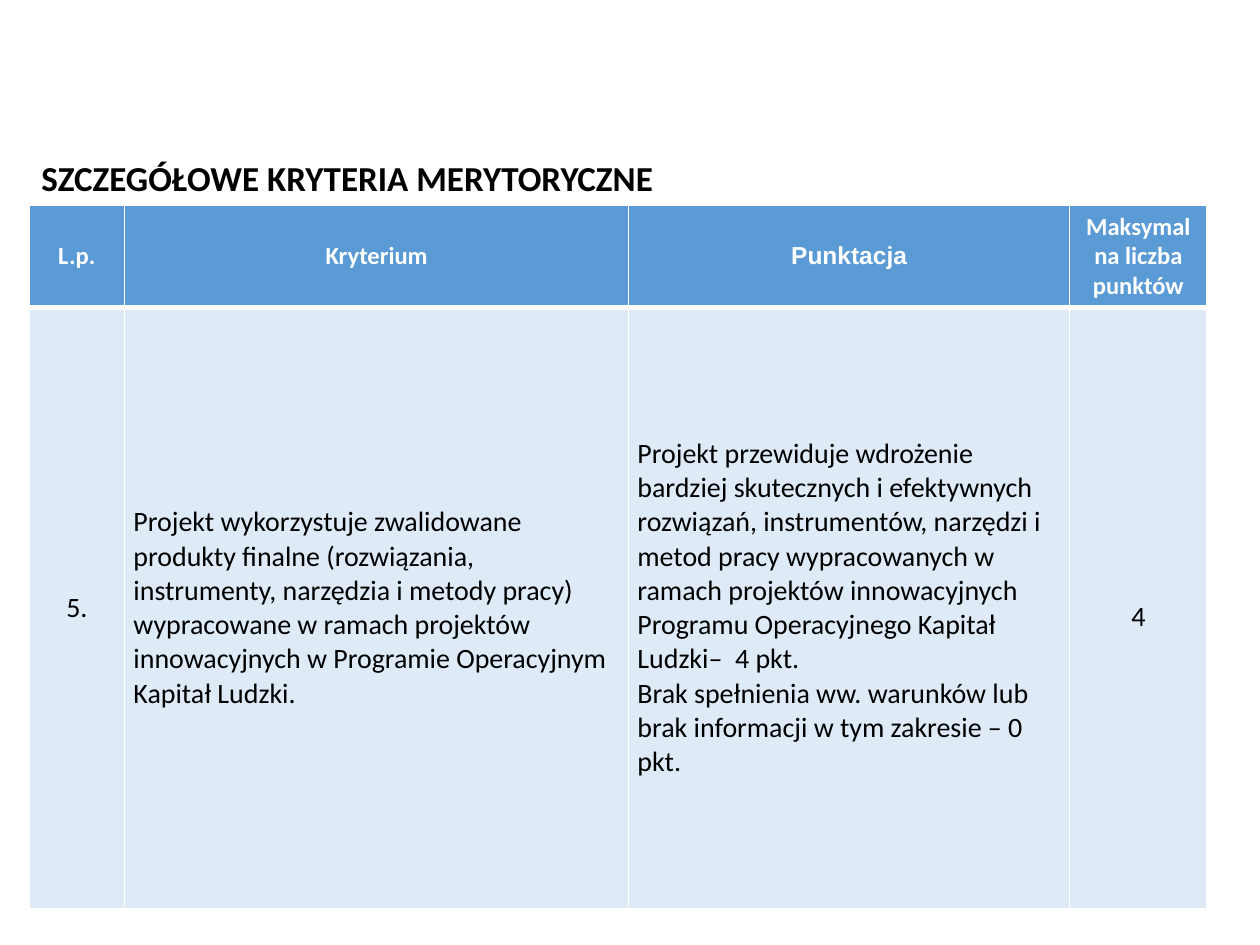
import pptx
import pptx.dml.color
import pptx.enum.text
import pptx.oxml
import pptx.oxml.ns
import pptx.util

WIDTH, HEIGHT = 10, 7.5
LEFT, CONTENT_WIDTH = 0.23, 9.35
COLUMN_WIDTHS = (0.76, 4, 3.5, 1.09)
ROW_HEIGHTS = (0.79, 4.77)
HEADER_FILL, BODY_FILL = "5B9BD5", "DEEBF7"
WHITE, BLACK = "FFFFFF", "000000"
CENTER = pptx.enum.text.PP_ALIGN.CENTER
LEFT_ALIGN = pptx.enum.text.PP_ALIGN.LEFT
MIDDLE = pptx.enum.text.MSO_ANCHOR.MIDDLE

HEADERS = (("L.p.", "Calibri"), ("Kryterium", "Calibri"),
           ("Punktacja", "Arial"), ("Maksymalna liczba punktów", "Calibri"))
CRITERION = (
    "Projekt wykorzystuje zwalidowane produkty finalne (rozwiązania, instrumenty, "
    "narzędzia i metody pracy) wypracowane w ramach projektów innowacyjnych w "
    "Programie Operacyjnym Kapitał Ludzki.")
SCORING = (
    "Projekt przewiduje wdrożenie bardziej skutecznych i efektywnych rozwiązań, "
    "instrumentów, narzędzi i metod pracy wypracowanych w ramach projektów "
    "innowacyjnych Programu Operacyjnego Kapitał Ludzki–  4 pkt.",
    "Brak spełnienia ww. warunków lub brak informacji w tym zakresie – 0 pkt.")


def color(value):
    return pptx.dml.color.RGBColor.from_string(value)


def inches(value):
    return pptx.util.Inches(value)


def write(frame, lines, size, text_color, bold=False, font="Calibri", align=LEFT_ALIGN):
    for index, line in enumerate(lines):
        paragraph = frame.paragraphs[0] if index == 0 else frame.add_paragraph()
        paragraph.alignment = align
        run = paragraph.add_run()
        run.text = line
        run.font.name = font
        run.font.size = pptx.util.Pt(size)
        run.font.bold = bold
        run.font.color.rgb = color(text_color)


def style_cell(cell, fill, top, bottom):
    """Add white borders, with top and bottom widths in points, then the fill."""
    properties = cell._tc.get_or_add_tcPr()
    for side, width in (("L", 1), ("R", 1), ("T", top), ("B", bottom)):
        properties.append(pptx.oxml.parse_xml(
            f'<a:ln{side} {pptx.oxml.ns.nsdecls("a")} w="{pptx.util.Pt(width)}">'
            f'<a:solidFill><a:srgbClr val="{WHITE}"/></a:solidFill></a:ln{side}>'))
    cell.fill.solid()
    cell.fill.fore_color.rgb = color(fill)
    cell.vertical_anchor = MIDDLE


def add_heading(slide, left, top, width, height):
    box = slide.shapes.add_textbox(*map(inches, (left, top, width, height)))
    frame = box.text_frame
    frame.word_wrap = True
    frame.vertical_anchor = MIDDLE
    write(frame, ["SZCZEGÓŁOWE KRYTERIA MERYTORYCZNE"], 20, BLACK, bold=True)


def add_criteria_table(slide, left, top, width, height):
    shape = slide.shapes.add_table(2, 4, *map(inches, (left, top, width, height)))
    table = shape.table
    for column, share in zip(table.columns, COLUMN_WIDTHS):
        column.width = inches(width * share / sum(COLUMN_WIDTHS))
    for row, share in zip(table.rows, ROW_HEIGHTS):
        row.height = inches(height * share / sum(ROW_HEIGHTS))

    # Header row
    for index, (label, font) in enumerate(HEADERS):
        cell = table.cell(0, index)
        style_cell(cell, HEADER_FILL, 1, 3)
        write(cell.text_frame, [label], 14, WHITE, True, font, CENTER)

    # Criterion row: number and points centred, descriptions left-aligned
    for index, lines in enumerate((["5."], [CRITERION], SCORING, ["4"])):
        cell = table.cell(1, index)
        style_cell(cell, BODY_FILL, 3, 1)
        is_description = index in (1, 2)
        if is_description:
            cell.margin_left = cell.margin_right = inches(0.07)
            cell.margin_top = cell.margin_bottom = 0
        write(cell.text_frame, lines, 16, BLACK,
              align=LEFT_ALIGN if is_description else CENTER)
    criterion = table.cell(1, 1).text_frame.paragraphs[0]
    criterion.space_after = pptx.util.Pt(4)
    table.cell(1, 3).text_frame.paragraphs[0].line_spacing = 1.5


def main():
    presentation = pptx.Presentation()
    presentation.slide_width = inches(WIDTH)
    presentation.slide_height = inches(HEIGHT)
    slide = presentation.slides.add_slide(presentation.slide_layouts[6])
    heading_top, heading_height = 1.19, 0.44
    add_criteria_table(slide, LEFT, heading_top + heading_height,
                       CONTENT_WIDTH, sum(ROW_HEIGHTS))
    add_heading(slide, LEFT, heading_top, CONTENT_WIDTH, heading_height)
    presentation.save("out.pptx")


if __name__ == "__main__":
    main()
